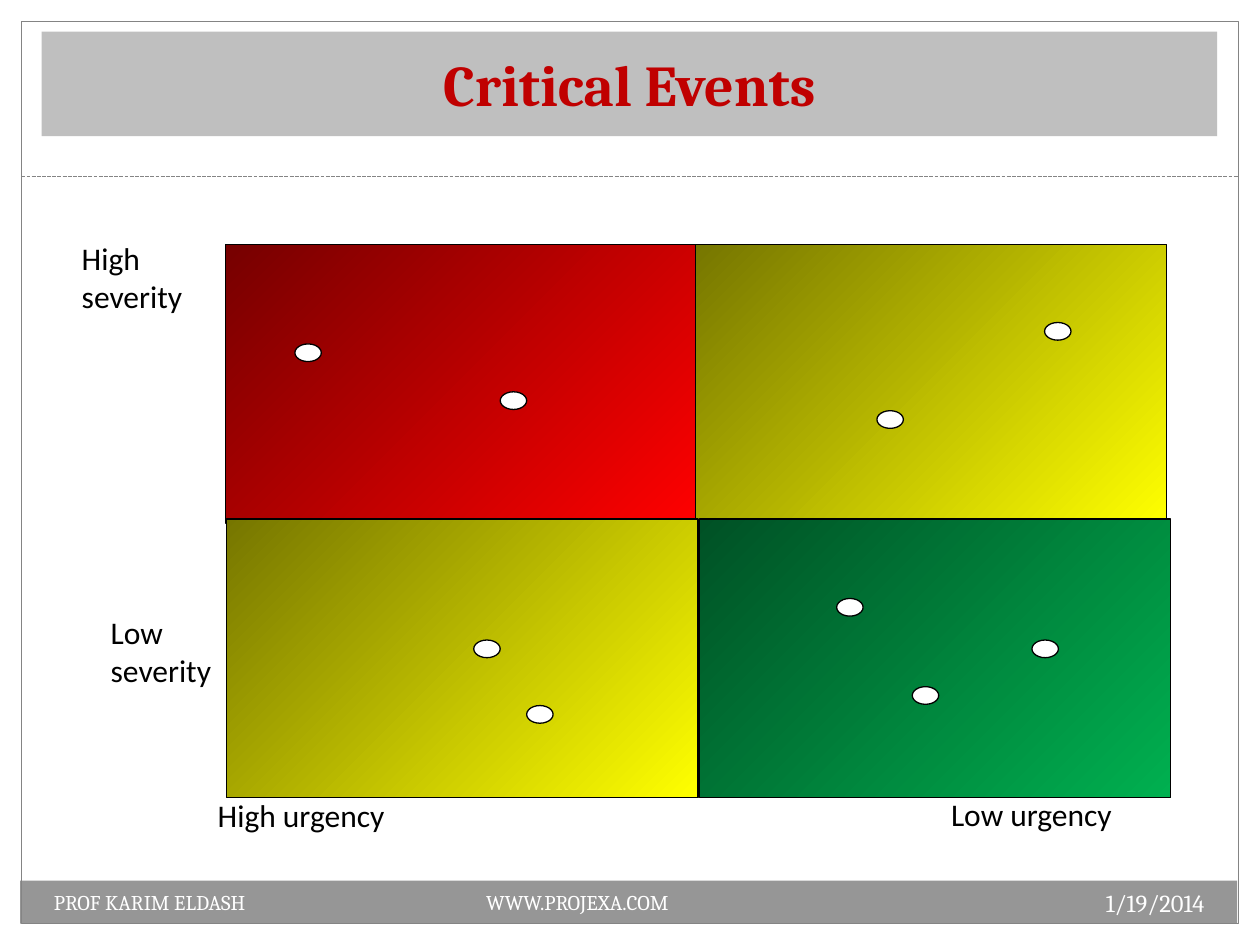
from pptx import Presentation
from pptx.dml.color import RGBColor
from pptx.enum.dml import MSO_LINE
from pptx.enum.shapes import MSO_CONNECTOR, MSO_SHAPE
from pptx.enum.text import MSO_ANCHOR, PP_ALIGN
from pptx.oxml.ns import qn
from pptx.util import Inches, Pt
from lxml.etree import SubElement

BLACK = RGBColor(0x00, 0x00, 0x00)
WHITE = RGBColor(0xFF, 0xFF, 0xFF)
FRAME_GREY = RGBColor(0x84, 0x84, 0x84)
FOOTER_GREY = RGBColor(0x96, 0x96, 0x96)
TITLE_GREY = RGBColor(0xBF, 0xBF, 0xBF)
TITLE_RED = RGBColor(0xC0, 0x00, 0x00)
RED = (RGBColor(0x76, 0x00, 0x00), RGBColor(0xFF, 0x00, 0x00))
YELLOW = (RGBColor(0x76, 0x76, 0x00), RGBColor(0xFF, 0xFF, 0x00))
GREEN = (RGBColor(0x00, 0x51, 0x25), RGBColor(0x00, 0xB0, 0x50))

QUADRANTS = [
    (1.79, 1.94, RED),
    (5.52, 1.94, YELLOW),
    (5.55, 4.12, GREEN),
    (1.8, 4.12, YELLOW),
]
AXIS_LABELS = [
    ("High urgency", 1.63, 6.27, 2.13, 0.52),
    ("Low urgency", 7.45, 6.26, 2.13, 0.52),
    ("High severity", 0.55, 1.85, 1.42, 0.78),
    ("Low severity", 0.78, 4.82, 1.19, 0.7),
]
EVENTS = [
    (4.18, 5.6), (6.96, 3.26), (7.24, 5.45), (6.64, 4.75), (3.97, 3.11),
    (8.19, 5.08), (3.76, 5.08), (2.34, 2.73), (8.29, 2.56),
]


class SlideBuilder:
    heading_font = "Cambria"
    label_font = "Calibri"
    line_width = Pt(0.75)

    def __init__(self, slide):
        self.slide = slide

    def style_text(self, paragraph, font, size, color, align, bold=False):
        paragraph.alignment = align
        paragraph.font.name = font
        paragraph.font.size = Pt(size)
        paragraph.font.color.rgb = color
        paragraph.font.bold = bold

    def title(self, text, left, top, width, height):
        title = self.slide.shapes.title
        title.left, title.top = Inches(left), Inches(top)
        title.width, title.height = Inches(width), Inches(height)
        title.fill.solid()
        title.fill.fore_color.rgb = TITLE_GREY
        title.text_frame.text = text
        title.text_frame.vertical_anchor = MSO_ANCHOR.MIDDLE
        self.style_text(title.text_frame.paragraphs[0], self.heading_font, 33,
                        TITLE_RED, PP_ALIGN.CENTER, True)

    def shape(self, kind, left, top, width, height, fill=None, line=None):
        shape = self.slide.shapes.add_shape(
            kind, Inches(left), Inches(top), Inches(width), Inches(height))
        shape.shadow.inherit = False
        if fill is None:
            shape.fill.background()
        else:
            shape.fill.solid()
            shape.fill.fore_color.rgb = fill
        if line is None:
            shape.line.fill.background()
        else:
            shape.line.color.rgb = line
            shape.line.width = self.line_width
        return shape

    def quadrant(self, left, top, colors):
        shape = self.shape(MSO_SHAPE.FLOWCHART_PROCESS, left, top, 3.74, 2.21,
                           line=BLACK)
        shape.fill.gradient()
        shape.fill.gradient_angle = 315
        for stop, position, color in zip(shape.fill.gradient_stops, (0, 1), colors):
            stop.position = position
            stop.color.rgb = color

    def event(self, left, top):
        self.shape(MSO_SHAPE.OVAL, left, top, 0.21, 0.14, WHITE, BLACK)

    def divider(self, left, right, top):
        line = self.slide.shapes.add_connector(
            MSO_CONNECTOR.STRAIGHT, Inches(left), Inches(top), Inches(right), Inches(top))
        line.line.color.rgb = FRAME_GREY
        line.line.width = self.line_width
        line.line.dash_style = MSO_LINE.SQUARE_DOT
        SubElement(line.element.spPr, qn("a:effectLst"))

    def text(self, text, left, top, width, height, font, size, color,
             align=PP_ALIGN.LEFT):
        box = self.slide.shapes.add_textbox(
            Inches(left), Inches(top), Inches(width), Inches(height))
        box.text_frame.word_wrap = True
        box.text_frame.text = text
        para = box.text_frame.paragraphs[0]
        self.style_text(para, font, size, color, align)
        return para

    def axis_label(self, text, left, top, width, height):
        para = self.text(text, left, top, width, height, self.label_font, 18, BLACK)
        para.space_after = Pt(10)

    def footer(self, text, left, top, width, size, align=PP_ALIGN.LEFT):
        self.text(text, left, top, width, 0.4, self.heading_font, size, WHITE, align)


def main():
    deck = Presentation()
    deck.slide_width, deck.slide_height = Inches(10), Inches(7.5)
    page = SlideBuilder(deck.slides.add_slide(deck.slide_layouts[5]))

    page.title("Critical Events", 0.33, 0.25, 9.33, 0.83)
    page.shape(MSO_SHAPE.RECTANGLE, 0.16, 6.99, 9.66, 0.34, FOOTER_GREY)
    page.shape(MSO_SHAPE.RECTANGLE, 0.17, 0.17, 9.66, 7.16, line=FRAME_GREY)
    page.divider(0.17, 9.83, 1.4)

    for quadrant in QUADRANTS:
        page.quadrant(*quadrant)
    for label in AXIS_LABELS:
        page.axis_label(*label)
    for event in EVENTS:
        page.event(*event)

    page.footer("1/19/2014", 6.33, 7, 3.33, 14, PP_ALIGN.RIGHT)
    page.footer("PROF KARIM ELDASH", 0.33, 7.01, 3, 12)
    page.footer("WWW.PROJEXA.COM", 3.76, 7.01, 2.65, 12)

    deck.save("out.pptx")


if __name__ == "__main__":
    main()
